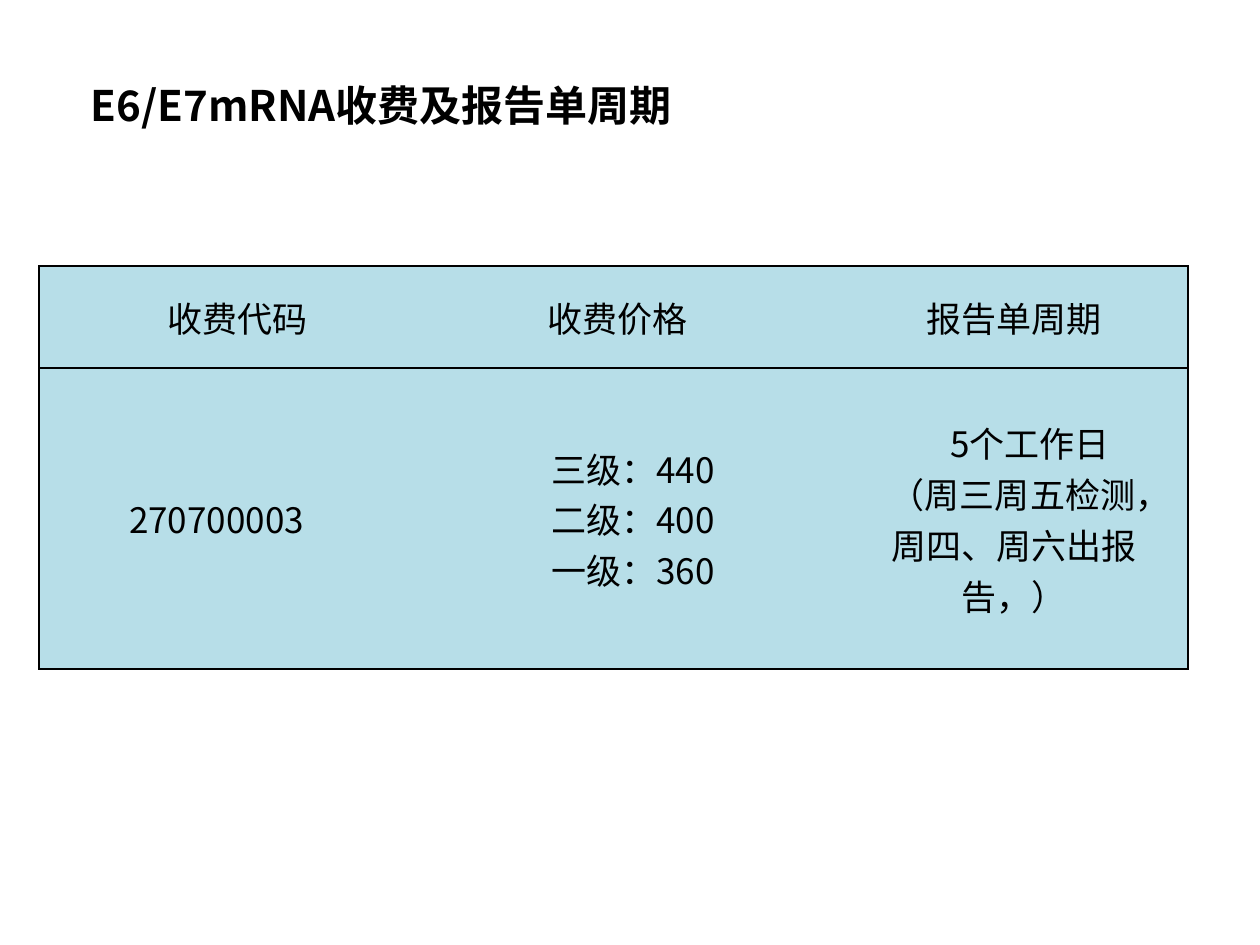
from lxml import etree
from pptx import Presentation
from pptx.dml.color import RGBColor
from pptx.enum import text
from pptx.oxml import ns
from pptx.util import Pt

COLORS = {"ink": "000000", "cell": "B7DEE8"}
FONT = "Noto Sans CJK SC"


class FeePage:
    """Holds the style and the current slide."""

    def __init__(self, deck):
        self.page = deck.slides.add_slide(deck.slide_layouts[5])

    def color(self, name):
        return RGBColor.from_string(COLORS[name])

    def add_span(self, para, words, size, bold=False):
        span = para.add_run()
        span.text = words
        for name, value in {"name": FONT, "size": Pt(size), "bold": bold}.items():
            setattr(span.font, name, value)
        span.font.color.rgb = self.color("ink")
        east = etree.SubElement(span._r.get_or_add_rPr(), ns.qn("a:ea"))
        east.set("typeface", FONT)

    def title(self, words, left, top, width, height):
        box = self.page.shapes.title
        place = {"left": left, "top": top, "width": width, "height": height}
        for name, value in place.items():
            setattr(box, name, Pt(value))
        frame = box.text_frame
        layout = {"word_wrap": True, "auto_size": text.MSO_AUTO_SIZE.NONE,
                  "vertical_anchor": text.MSO_ANCHOR.MIDDLE}
        for name, value in layout.items():
            setattr(frame, name, value)
        frame.paragraphs[0].alignment = text.PP_ALIGN.LEFT
        self.add_span(frame.paragraphs[0], words, 24, bold=True)

    def borders(self, cell, drawn):
        props = cell._tc.get_or_add_tcPr()
        for side in "LRTB":
            line = etree.SubElement(props, ns.qn(f"a:ln{side}"), w=str(Pt(1)))
            if side in drawn:
                fill = etree.SubElement(line, ns.qn("a:solidFill"))
                etree.SubElement(fill, ns.qn("a:srgbClr"), val=COLORS["ink"])
            else:
                etree.SubElement(line, ns.qn("a:noFill"))

    def cell(self, cell, lines, indent, drawn):
        self.borders(cell, drawn)
        cell.fill.solid()
        cell.fill.fore_color.rgb = self.color("cell")
        layout = {"margin_left": Pt(5), "margin_right": Pt(5), "margin_top": 0,
                  "margin_bottom": 0, "vertical_anchor": text.MSO_ANCHOR.MIDDLE}
        for name, value in layout.items():
            setattr(cell, name, value)
        frame = cell.text_frame
        for index, words in enumerate(lines):
            para = frame.add_paragraph() if index else frame.paragraphs[0]
            para.alignment = text.PP_ALIGN.CENTER
            if indent:
                para._p.get_or_add_pPr().set("indent", str(Pt(indent)))
            self.add_span(para, words, 20)

    def table(self, rows, left, top, widths, heights):
        grid = self.page.shapes.add_table(
            len(heights), len(widths), Pt(left), Pt(top),
            Pt(sum(widths)), Pt(sum(heights))).table
        grid.first_row = grid.horz_banding = False
        for column, width in zip(grid.columns, widths):
            column.width = Pt(width)
        for row, height in zip(grid.rows, heights):
            row.height = Pt(height)
        last = len(widths) - 1
        for r, row in enumerate(rows):
            for c, (lines, indent) in enumerate(row):
                drawn = "TB" + ("L" if c == 0 else "") + ("R" if c == last else "")
                self.cell(grid.cell(r, c), lines, indent, drawn)


def main():
    deck = Presentation()
    deck.slide_width, deck.slide_height = Pt(720), Pt(540)
    page = FeePage(deck)

    # Heading
    page.title("E6/E7mRNA收费及报告单周期", 44.6, 33.8, 648, 52.6)

    # Fees and report times: each cell is its lines and first-line indent
    rows = [
        [(["收费代码"], 24), (["收费价格"], 0), (["报告单周期"], 0)],
        [(["270700003"], 0),
         (["三级：440", "二级：400", "一级：360"], 18),
         (["5个工作日", "（周三周五检测，周四、周六出报告，）"], 18)],
    ]
    page.table(rows, 22.3, 152, [203, 255, 198.7], [58.3, 172])

    deck.save("out.pptx")


if __name__ == "__main__":
    main()
